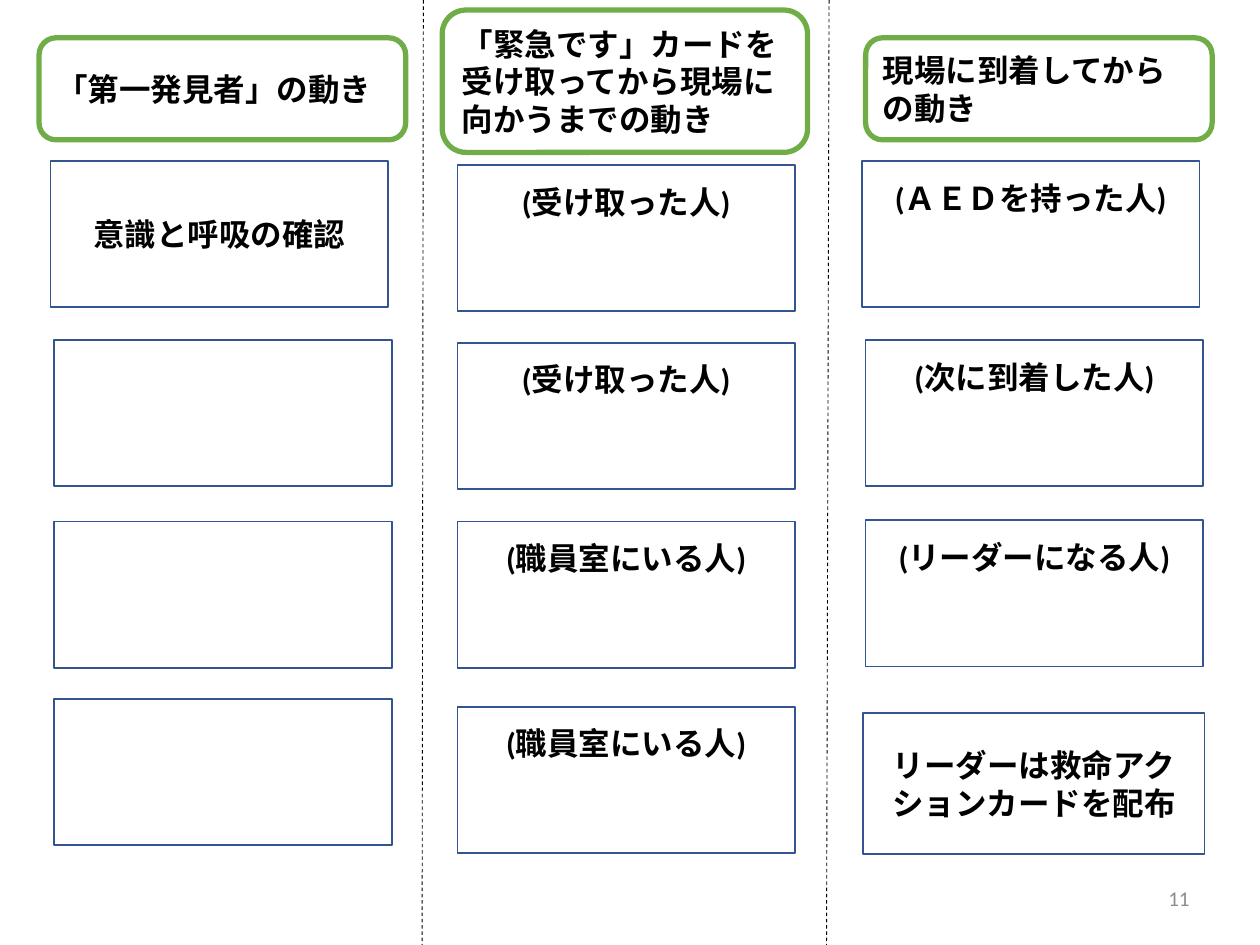
from lxml.etree import SubElement
from pptx import Presentation
from pptx.dml.color import RGBColor
from pptx.enum.dml import MSO_LINE
from pptx.enum.shapes import MSO_CONNECTOR, MSO_SHAPE
from pptx.enum.text import MSO_ANCHOR, PP_ALIGN
from pptx.oxml.ns import qn
from pptx.util import Inches, Pt

CJK, LATIN = "Noto Sans CJK JP", "Calibri"
GREEN, BLUE, BLACK, WHITE, GREY = "70AD47", "325491", "000000", "FFFFFF", "8C8C8C"
BOX_W, BOX_H = 2.68, 1.16

# Headings: text, (left, top, width, height)
HEADINGS = [
    ("「第一発見者」の動き", (0.31, 0.3, 2.91, 0.81)),
    ("「緊急です」カードを受け取ってから現場に向かうまでの動き", (3.51, 0.08, 2.9, 1.13)),
    ("現場に到着してからの動き", (6.87, 0.3, 2.75, 0.81)),
]
# Step boxes to fill in, by column: role, left, top
STEPS = [
    [("", 0.43, 2.7), ("", 0.43, 4.14), ("", 0.43, 5.55)],
    [("(受け取った人)", 3.63, 1.31), ("(受け取った人)", 3.63, 2.72),
     ("(職員室にいる人)", 3.63, 4.14), ("(職員室にいる人)", 3.63, 5.61)],
    [("(ＡＥＤを持った人)", 6.84, 1.28), ("(次に到着した人)", 6.87, 2.7),
     ("(リーダーになる人)", 6.87, 4.13)],
]
# Steps already given: text, (left, top, width, height)
GIVEN_STEPS = [
    ("意識と呼吸の確認", (0.4, 1.28, BOX_W, BOX_H)),
    ("リーダーは救命アクションカードを配布", (6.85, 5.66, 2.71, 1.12)),
]
DIVIDERS = [(3.36, 3.35), (6.58, 6.56)]  # x at top, x at bottom


def rgb(value):
    return RGBColor.from_string(value)


def write(s, text, align, font=CJK, size=18, color=BLACK, bold=True, anchor=MSO_ANCHOR.MIDDLE):
    tf = s.text_frame
    tf.word_wrap = True
    tf.vertical_anchor = anchor
    p = tf.paragraphs[0]
    p.alignment = align
    r = p.add_run()
    r.text = text
    r.font.name, r.font.size, r.font.bold = font, Pt(size), bold
    r.font.color.rgb = rgb(color)
    SubElement(r.font._element, qn("a:ea")).set("typeface", CJK)


def add_box(slide, kind, place, line, width, fill=None):
    s = slide.shapes.add_shape(kind, *map(Inches, place))
    s.shadow.inherit = False
    if fill:
        s.fill.solid()
        s.fill.fore_color.rgb = rgb(fill)
    else:
        s.fill.background()
    s.line.color.rgb = rgb(line)
    s.line.width = Pt(width)
    return s


def main():
    prs = Presentation()
    prs.slide_width, prs.slide_height = Inches(10), Inches(7.5)
    slide = prs.slides.add_slide(prs.slide_layouts[6])

    # Column headings
    for text, place in HEADINGS:
        s = add_box(slide, MSO_SHAPE.ROUNDED_RECTANGLE, place, GREEN, 3, WHITE)
        write(s, text, PP_ALIGN.LEFT)

    # Given steps, centred in their boxes
    for text, place in GIVEN_STEPS:
        s = add_box(slide, MSO_SHAPE.RECTANGLE, place, BLUE, 1)
        write(s, text, PP_ALIGN.CENTER)

    # Boxes to fill in, with the role at the top
    for column in STEPS:
        for role, left, top in column:
            s = add_box(slide, MSO_SHAPE.RECTANGLE, (left, top, BOX_W, BOX_H), BLUE, 1)
            if role:
                write(s, role, PP_ALIGN.CENTER, LATIN, anchor=MSO_ANCHOR.TOP)
                s.text_frame.margin_top = Inches(0.14)

    # Dashed column dividers
    for x_top, x_bottom in DIVIDERS:
        c = slide.shapes.add_connector(
            MSO_CONNECTOR.STRAIGHT, Inches(x_top), 0, Inches(x_bottom), prs.slide_height)
        c.line.color.rgb = rgb(BLACK)
        c.line.width = Pt(0.5)
        c.line.dash_style = MSO_LINE.DASH
        SubElement(c._element.spPr, qn("a:effectLst"))

    # Page number
    s = slide.shapes.add_textbox(*map(Inches, (7.46, 6.88, 2.08, 0.5)))
    write(s, "11", PP_ALIGN.RIGHT, LATIN, 12, GREY, False)

    prs.save("out.pptx")


if __name__ == "__main__":
    main()
